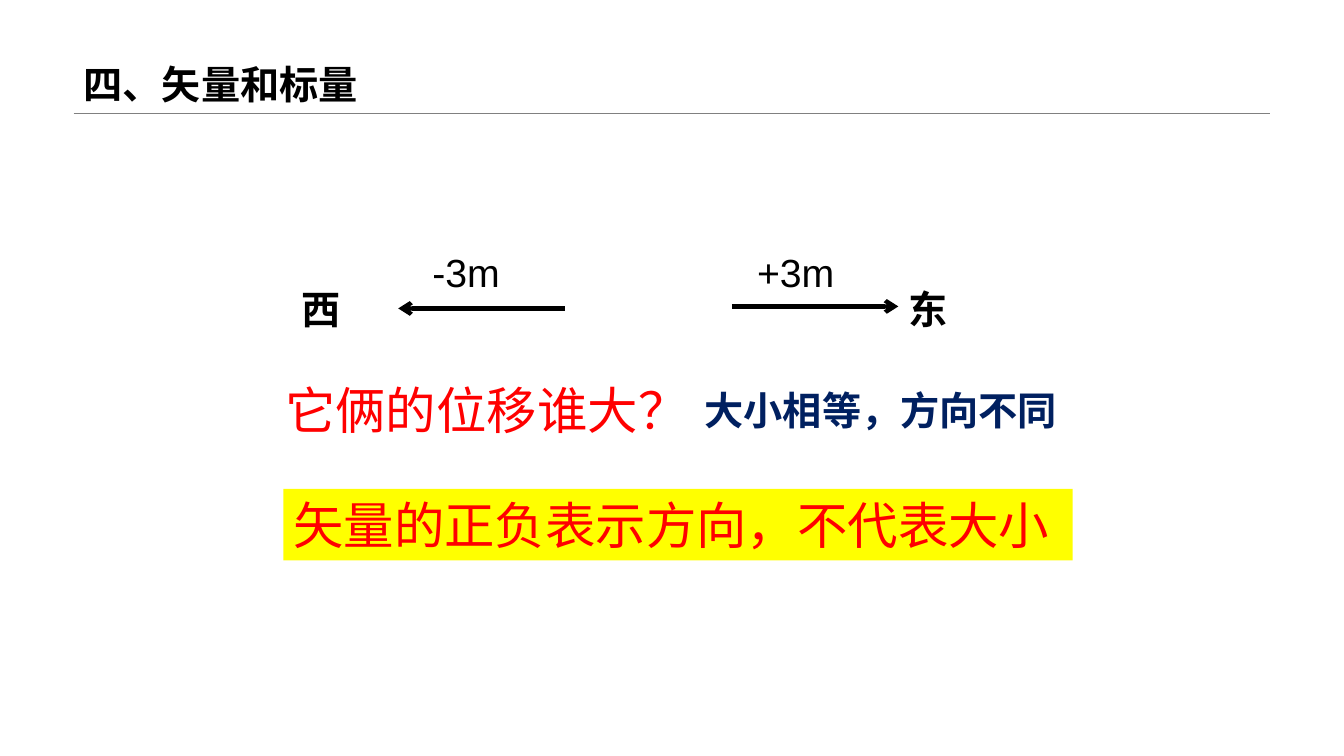
"""Build the slide on vectors and scalars, with two opposite displacements."""
from lxml import etree
from pptx import Presentation
from pptx.dml.color import RGBColor
from pptx.enum import shapes, text
from pptx.oxml.ns import qn
from pptx.util import Inches, Pt

THEME = {
    "black": RGBColor(0, 0, 0),
    "gray": RGBColor(0x80, 0x80, 0x80),
    "red": RGBColor(0xFF, 0, 0),
    "navy": RGBColor(0, 0x20, 0x60),
    "yellow": RGBColor(0xFF, 0xFF, 0),
    "body": "Arial",
    "statement": "Noto Sans CJK JP",
    "normal": 28,
    "large": 36,
}


def write(shape, words, size="normal", color="black", font="body", bold=False):
    frame = shape.text_frame
    frame.text = words
    frame.word_wrap = True
    paragraph = frame.paragraphs[0]
    paragraph.alignment = text.PP_ALIGN.LEFT
    run = paragraph.runs[0]
    run.font.size = Pt(THEME[size])
    run.font.bold = bold
    run.font.name = THEME[font]
    run.font.color.rgb = THEME[color]
    east_asian = etree.Element(qn("a:ea"), typeface=THEME[font])
    run.font._element.find(qn("a:latin")).addnext(east_asian)


def draw_line(start, end, top, color, width):
    line = slide.shapes.add_connector(
        shapes.MSO_CONNECTOR.STRAIGHT,
        Inches(start), Inches(top), Inches(end), Inches(top))
    line.line.color.rgb = THEME[color]
    line.line.width = Pt(width)
    etree.SubElement(line._element.spPr, qn("a:effectLst"))
    return line


presentation = Presentation()
presentation.slide_width = Inches(13.33)
presentation.slide_height = Inches(7.5)
slide = presentation.slides.add_slide(presentation.slide_layouts[5])

margin, content_width, header_height = 0.73, 11.87, 1.12
draw_line(margin, margin + content_width, header_height, "gray", 0.25)

title = slide.shapes.title
title.left, title.top = Inches(margin), Inches(0)
title.width, title.height = Inches(content_width), Inches(header_height)
title.text_frame.vertical_anchor = text.MSO_ANCHOR.BOTTOM
write(title, "四、矢量和标量", bold=True)
title.text_frame.paragraphs[0].line_spacing = 0.9

arrow_length = 1.65
for start, direction, top in [(7.26, 1, 3.04), (5.6, -1, 3.06)]:
    arrow = draw_line(start, start + direction * arrow_length, top, "black", 3)
    etree.SubElement(arrow.line._get_or_add_ln(), qn("a:tailEnd"), type="arrow")

label_width, normal_height, large_height = 1.89, 0.57, 0.71
value_top, direction_top = 2.41, 2.78
statement = {"size": "large", "color": "red", "font": "statement"}
labels = [
    ("+3m", 7.41, value_top, label_width, normal_height, {}),
    ("-3m", 4.19, value_top, label_width, normal_height, {}),
    ("西", 2.89, direction_top, label_width, normal_height, {"bold": True}),
    ("东", 8.91, direction_top, label_width, normal_height, {"bold": True}),
    ("它俩的位移谁大？", 2.73, 3.71, 4.98, large_height, statement),
    ("大小相等，方向不同", 6.89, 3.78, 4.19, normal_height,
     {"color": "navy", "bold": True}),
]
for words, left, top, width, height, style in labels:
    label = slide.shapes.add_textbox(
        Inches(left), Inches(top), Inches(width), Inches(height))
    write(label, words, **style)

conclusion = slide.shapes.add_shape(
    shapes.MSO_SHAPE.RECTANGLE,
    Inches(2.81), Inches(4.85), Inches(7.83), Inches(large_height))
conclusion.shadow.inherit = False
conclusion.fill.solid()
conclusion.fill.fore_color.rgb = THEME["yellow"]
conclusion.line.fill.background()
write(conclusion, "矢量的正负表示方向，不代表大小", **statement)

presentation.save("out.pptx")
